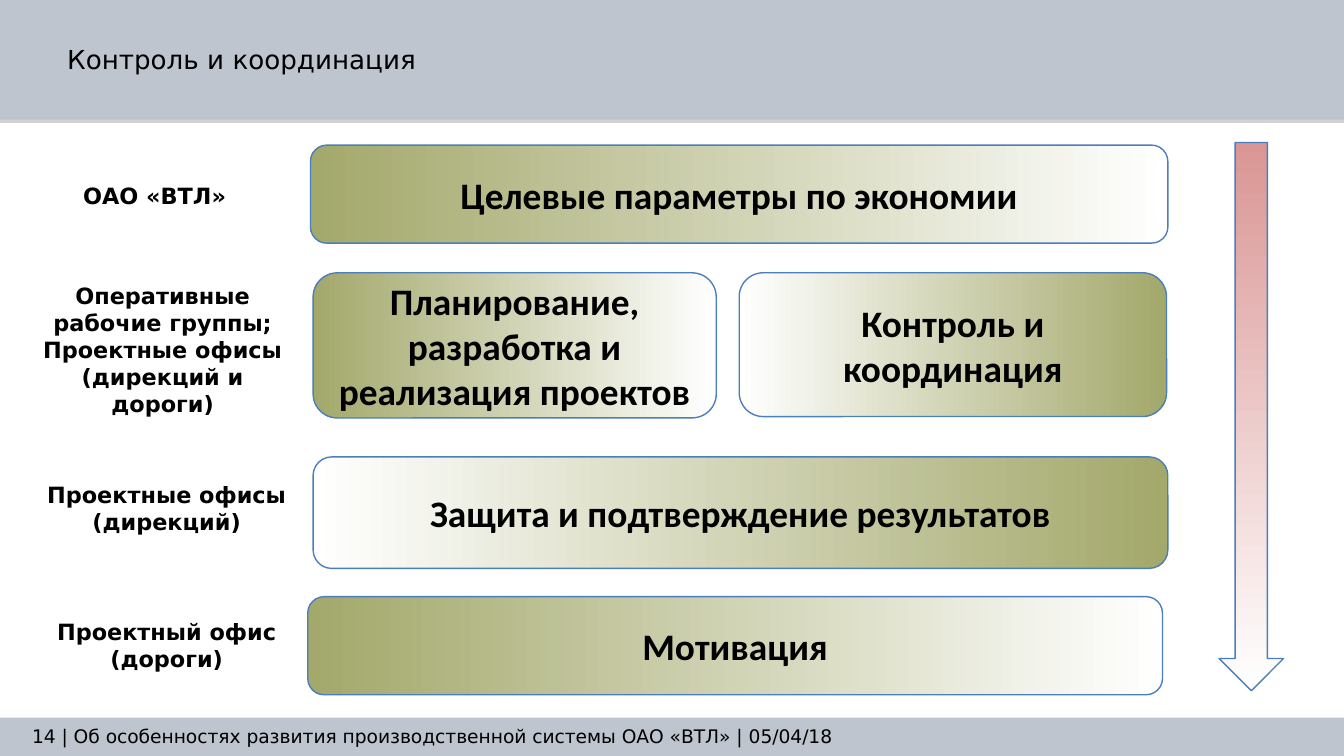
import pptx
import pptx.util
import pptx.dml.color
import pptx.enum.shapes
import pptx.enum.text
import pptx.oxml
import pptx.oxml.ns

Inches, Pt = pptx.util.Inches, pptx.util.Pt
RGBColor = pptx.dml.color.RGBColor
MSO_SHAPE = pptx.enum.shapes.MSO_SHAPE
PP_ALIGN = pptx.enum.text.PP_ALIGN
MSO_ANCHOR = pptx.enum.text.MSO_ANCHOR

BAND = RGBColor(0xBF, 0xC5, 0xCE)
OLIVE = RGBColor(0xA3, 0xA8, 0x6B)
ROSE = RGBColor(0xD9, 0x96, 0x94)
BLUE = RGBColor(0x4B, 0x7E, 0xBC)
WHITE = RGBColor(0xFF, 0xFF, 0xFF)
BLACK = RGBColor(0, 0, 0)

BAND_SHADOW = (
    f'<a:effectLst {pptx.oxml.ns.nsdecls("a")}>'
    '<a:outerShdw dist="22860" dir="5400000" rotWithShape="0">'
    '<a:srgbClr val="808080"><a:alpha val="35000"/></a:srgbClr>'
    '</a:outerShdw></a:effectLst>')


def write(sp, text, size, name="DejaVu Sans", bold=False,
          align=PP_ALIGN.LEFT, anchor=MSO_ANCHOR.TOP, indent=0):
    tf = sp.text_frame
    tf.word_wrap = True
    tf.auto_size = pptx.enum.text.MSO_AUTO_SIZE.NONE
    tf.vertical_anchor = anchor
    p = tf.paragraphs[0]
    p.alignment = align
    pPr = p._p.get_or_add_pPr()
    pPr.set("marL", str(Inches(indent)))
    pPr.set("indent", "0")
    r = p.add_run()
    r.text = text
    for key, value in {"size": Pt(size), "name": name, "bold": bold}.items():
        setattr(r.font, key, value)
    r.font.color.rgb = BLACK


def add_gradient_shape(kind, box, color, angle):
    sp = s.shapes.add_shape(kind, *map(Inches, box))
    sp.shadow.inherit = False
    sp.fill.gradient()
    sp.fill.gradient_angle = angle
    for stop, rgb in zip(sp.fill.gradient_stops, (WHITE, color)):
        stop.color.rgb = rgb
    sp.line.color.rgb = BLUE
    sp.line.width = Pt(0.75)
    return sp


# Widescreen slide, 16:9
prs = pptx.Presentation()
prs.slide_width = Inches(10)
prs.slide_height = Inches(10 * 9 / 16)
s = prs.slides.add_slide(prs.slide_layouts[5])
title = s.shapes.title

# Header and footer bands, behind the title
for top, height in ((0, 0.89), (5.34, 0.29)):
    sp = s.shapes.add_shape(MSO_SHAPE.RECTANGLE, 0, Inches(top),
                            Inches(10), Inches(height))
    sp.shadow.inherit = False
    effects = sp._element.spPr.find(pptx.oxml.ns.qn("a:effectLst"))
    effects.getparent().replace(effects, pptx.oxml.parse_xml(BAND_SHADOW))
    sp.fill.solid()
    sp.fill.fore_color.rgb = BAND
    sp.line.fill.background()
    title.element.addprevious(sp.element)

# Title
title.left, title.top = Inches(0), Inches(0.27)
title.width, title.height = Inches(10), Inches(0.34)
write(title, "Контроль и координация", 14, indent=0.4)

# Footer text
sp = s.shapes.add_textbox(*map(Inches, (0.14, 5.33, 9.04, 0.3)))
write(sp, "14 | Об особенностях развития производственной системы "
      "ОАО «ВТЛ» | 05/04/18", 10, anchor=MSO_ANCHOR.MIDDLE)

# Process boxes: olive on the left at 180 degrees, on the right at 0
boxes = [
    ("Целевые параметры по экономии", (2.31, 1.08, 6.38, 0.73), 180),
    ("Планирование, разработка и реализация проектов",
     (2.33, 2.03, 3, 1.08), 180),
    ("Защита и подтверждение результатов", (2.33, 3.4, 6.36, 0.83), 0),
    ("Контроль и координация", (5.5, 2.03, 3.18, 1.07), 0),
    ("Мотивация", (2.29, 4.44, 6.36, 0.73), 180),
]
for text, box, angle in boxes:
    sp = add_gradient_shape(MSO_SHAPE.ROUNDED_RECTANGLE, box, OLIVE, angle)
    write(sp, text, 20, "Calibri", True, PP_ALIGN.CENTER, MSO_ANCHOR.MIDDLE)

# Arrow pointing down the levels
arrow = add_gradient_shape(MSO_SHAPE.RIGHT_ARROW, (7.27, 2.86, 4.08, 0.48),
                           ROSE, 180)
arrow.rotation = 90

# Responsible units on the left
labels = [
    ("ОАО «ВТЛ»", (0.43, 1.31, 1.62, 0.3), PP_ALIGN.LEFT),
    ("Оперативные рабочие группы; Проектные офисы (дирекций и дороги)",
     (0.12, 2.05, 2.09, 1.11), PP_ALIGN.CENTER),
    ("Проектные офисы (дирекций)", (0, 3.53, 2.39, 0.5), PP_ALIGN.CENTER),
    ("Проектный офис (дороги)", (0, 4.55, 2.39, 0.5), PP_ALIGN.CENTER),
]
for text, box, align in labels:
    sp = s.shapes.add_textbox(*map(Inches, box))
    write(sp, text, 12, bold=True, align=align, indent=0.09)

prs.save("out.pptx")
